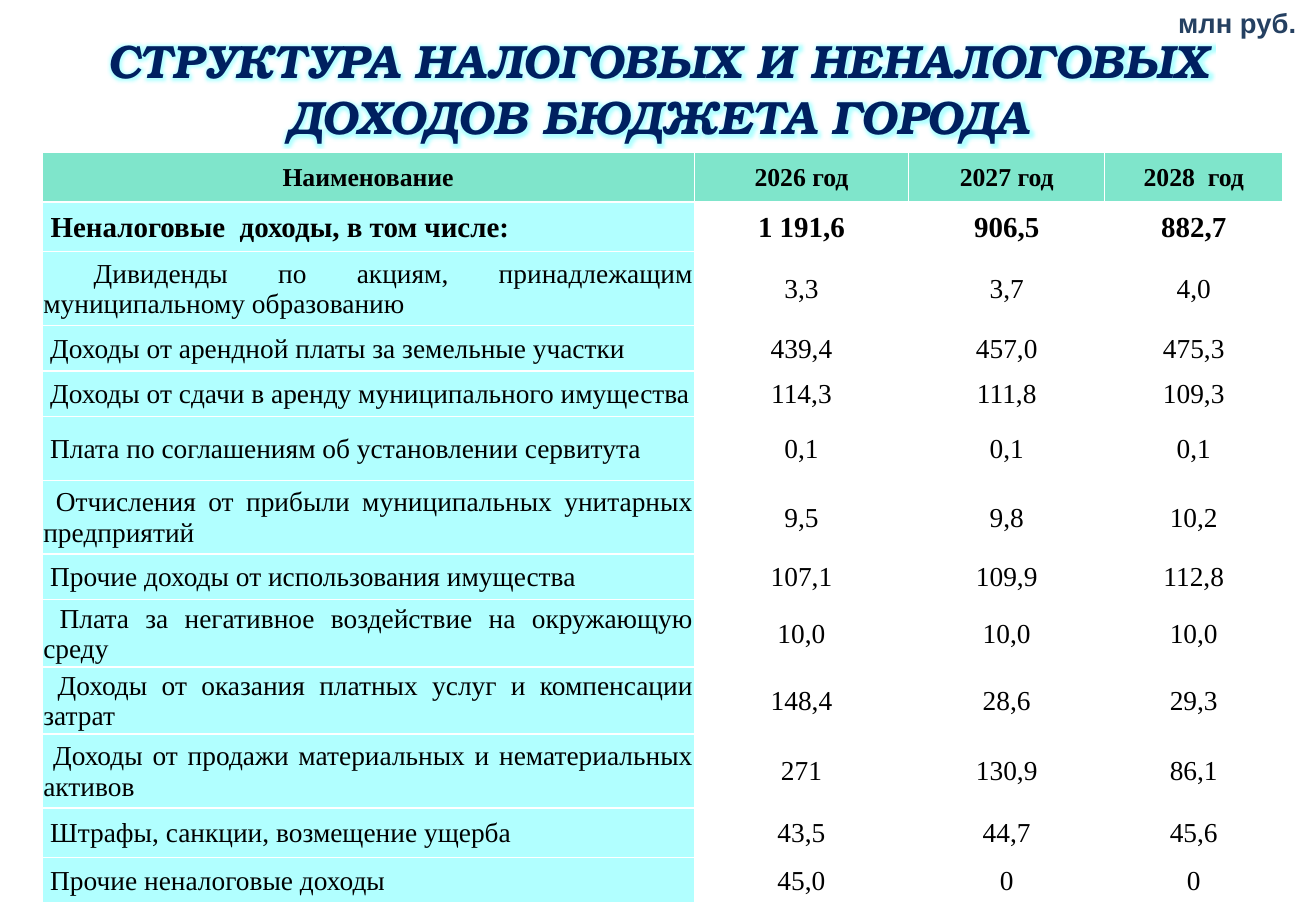
from lxml.etree import SubElement
from pptx import Presentation
from pptx.dml.color import RGBColor
from pptx.enum.text import MSO_ANCHOR as Anchor, MSO_AUTO_SIZE as AutoSize, PP_ALIGN as Align
from pptx.oxml import parse_xml
from pptx.oxml.ns import nsdecls, qn
from pptx.util import Cm, Pt

TITLE = ("СТРУКТУРА НАЛОГОВЫХ И НЕНАЛОГОВЫХ", "ДОХОДОВ БЮДЖЕТА ГОРОДА")
COLUMN_WIDTHS = (14.3, 4.7, 4.3, 3.9)
REVENUES = (
    (1.1, "Наименование", "2026 год", "2027 год", "2028  год"),
    (1.08, " Неналоговые  доходы, в том числе:", "1 191,6", "906,5", "882,7"),
    (1.62, " Дивиденды по акциям, принадлежащим муниципальному образованию", "3,3", "3,7", "4,0"),
    (1, " Доходы от арендной платы за земельные участки", "439,4", "457,0", "475,3"),
    (1, " Доходы от сдачи в аренду муниципального имущества", "114,3", "111,8", "109,3"),
    (1.4, " Плата по соглашениям об установлении сервитута", "0,1", "0,1", "0,1"),
    (1.62, " Отчисления от прибыли муниципальных унитарных предприятий", "9,5", "9,8", "10,2"),
    (1, " Прочие доходы от использования имущества", "107,1", "109,9", "112,8"),
    (1.46, " Плата за негативное воздействие на окружающую среду", "10,0", "10,0", "10,0"),
    (1.46, " Доходы от оказания платных услуг и компенсации затрат", "148,4", "28,6", "29,3"),
    (1.62, " Доходы от продажи материальных и нематериальных активов", "271", "130,9", "86,1"),
    (1.09, " Штрафы, санкции, возмещение ущерба", "43,5", "44,7", "45,6"),
    (1, " Прочие неналоговые доходы", "45,0", "0", "0"),
)


def color(value):
    """Return the colour of a hex string."""
    return RGBColor.from_string(value)


def set_font(paragraph, name, size, ink, bold=False, italic=False):
    """Set the font of a whole paragraph."""
    font = paragraph.font
    font.name, font.size = name, Pt(size)
    font.bold, font.italic = bold, italic
    font.color.rgb = color(ink)


def add_glow(run):
    """Surround the letters of a run with a pale cyan glow."""
    run.font._element.append(parse_xml(
        f'<a:effectLst {nsdecls("a")}><a:glow rad="63500"><a:srgbClr val="65FFFF">'
        '<a:alpha val="50000"/></a:srgbClr></a:glow></a:effectLst>'))


def fill_half(cell, value):
    """Fill a cell with a half-transparent colour."""
    cell.fill.solid()
    cell.fill.fore_color.rgb = color(value)
    swatch = cell._tc.tcPr.find(f"{qn('a:solidFill')}/{qn('a:srgbClr')}")
    SubElement(swatch, qn("a:alpha"), val="50000")


def add_borders(cell):
    """Draw white one-point borders around a cell."""
    for index, side in enumerate("LRTB"):
        cell._tc.tcPr.insert(index, parse_xml(
            f'<a:ln{side} {nsdecls("a")} w="12700"><a:solidFill>'
            f'<a:srgbClr val="FFFFFF"/></a:solidFill></a:ln{side}>'))


def place_title(slide, left, top, width, height):
    """Place the two-line glowing title in its box."""
    title = slide.shapes.title
    title.left, title.top, title.width, title.height = left, top, width, height
    frame = title.text_frame
    frame.text = "\n".join(TITLE)
    frame.auto_size = AutoSize.NONE
    frame.vertical_anchor = Anchor.MIDDLE
    for paragraph in frame.paragraphs:
        paragraph.alignment = Align.CENTER
        set_font(paragraph, "TeX Gyre Bonum", 29, "002060", bold=True, italic=True)
        add_glow(paragraph.runs[0])


def add_units(slide, left, top, width, height):
    """Add the label of the units in the corner."""
    frame = slide.shapes.add_textbox(left, top, width, height).text_frame
    frame.word_wrap = False
    frame.margin_left = frame.margin_right = Cm(0.3)
    frame.margin_top = frame.margin_bottom = Cm(0.15)
    frame.text = "млн руб."
    set_font(frame.paragraphs[0], "Arial", 17, "254061", bold=True)


def format_cell(cell, row, column):
    """Format a cell by its place in the revenue table."""
    cell.vertical_anchor = Anchor.MIDDLE
    cell.margin_left = cell.margin_right = cell.margin_top = Cm(0.03)
    cell.margin_bottom = 0
    paragraph = cell.text_frame.paragraphs[0]
    paragraph.alignment = Align.JUSTIFY if row and not column else Align.CENTER
    size = {0: 16, 1: 18}.get(row, 17)
    set_font(paragraph, "Times New Roman", size, "000000", bold=row < 2)
    if row == 0:
        fill_half(cell, "00CC99")
    elif column == 0:
        fill_half(cell, "65FFFF")
    else:
        cell.fill.background()
    add_borders(cell)


def add_revenues(slide, left, top, width, height):
    """Add the table of revenues, scaled to its box."""
    table = slide.shapes.add_table(
        len(REVENUES), len(COLUMN_WIDTHS), left, top, width, height).table
    table.first_row = table.horz_banding = False
    for column, share in zip(table.columns, COLUMN_WIDTHS):
        column.width = int(width * share / sum(COLUMN_WIDTHS))
    total = sum(revenue[0] for revenue in REVENUES)
    for row, (share, *texts) in enumerate(REVENUES):
        table.rows[row].height = int(height * share / total)
        for column, text in enumerate(texts):
            cell = table.cell(row, column)
            cell.text = text
            format_cell(cell, row, column)


def main():
    """Build the slide and save it."""
    deck = Presentation()
    deck.slide_width, deck.slide_height = Cm(28.85), Cm(20.14)
    slide = deck.slides.add_slide(deck.slide_layouts[5])
    place_title(slide, 0, Cm(0.5), deck.slide_width, Cm(2.87))
    add_units(slide, Cm(25.53), Cm(-0.02), Cm(3.25), Cm(1.04))
    add_revenues(slide, Cm(0.92), Cm(3.33), Cm(27.2), Cm(16.45))
    deck.save("out.pptx")


if __name__ == "__main__":
    main()
